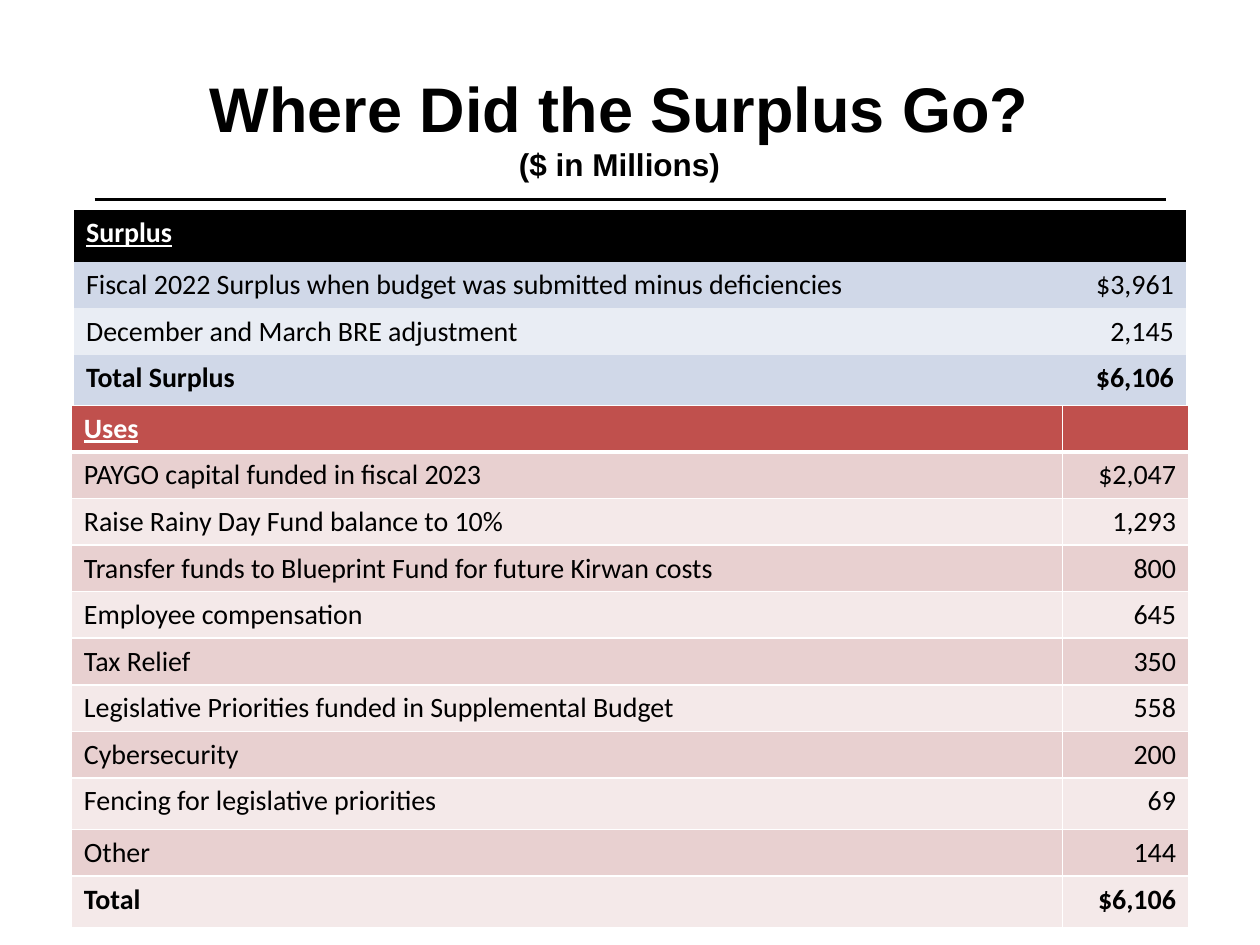
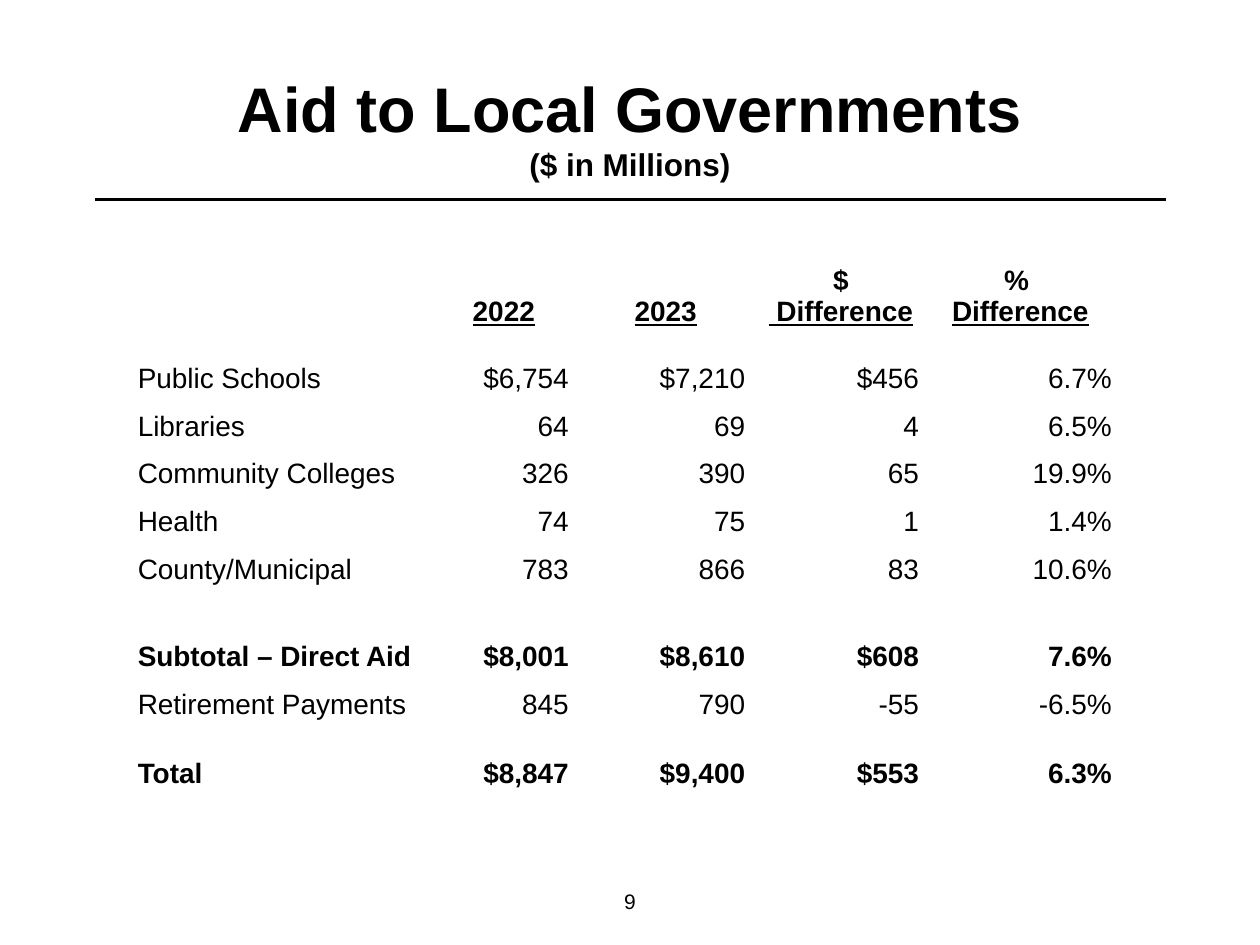
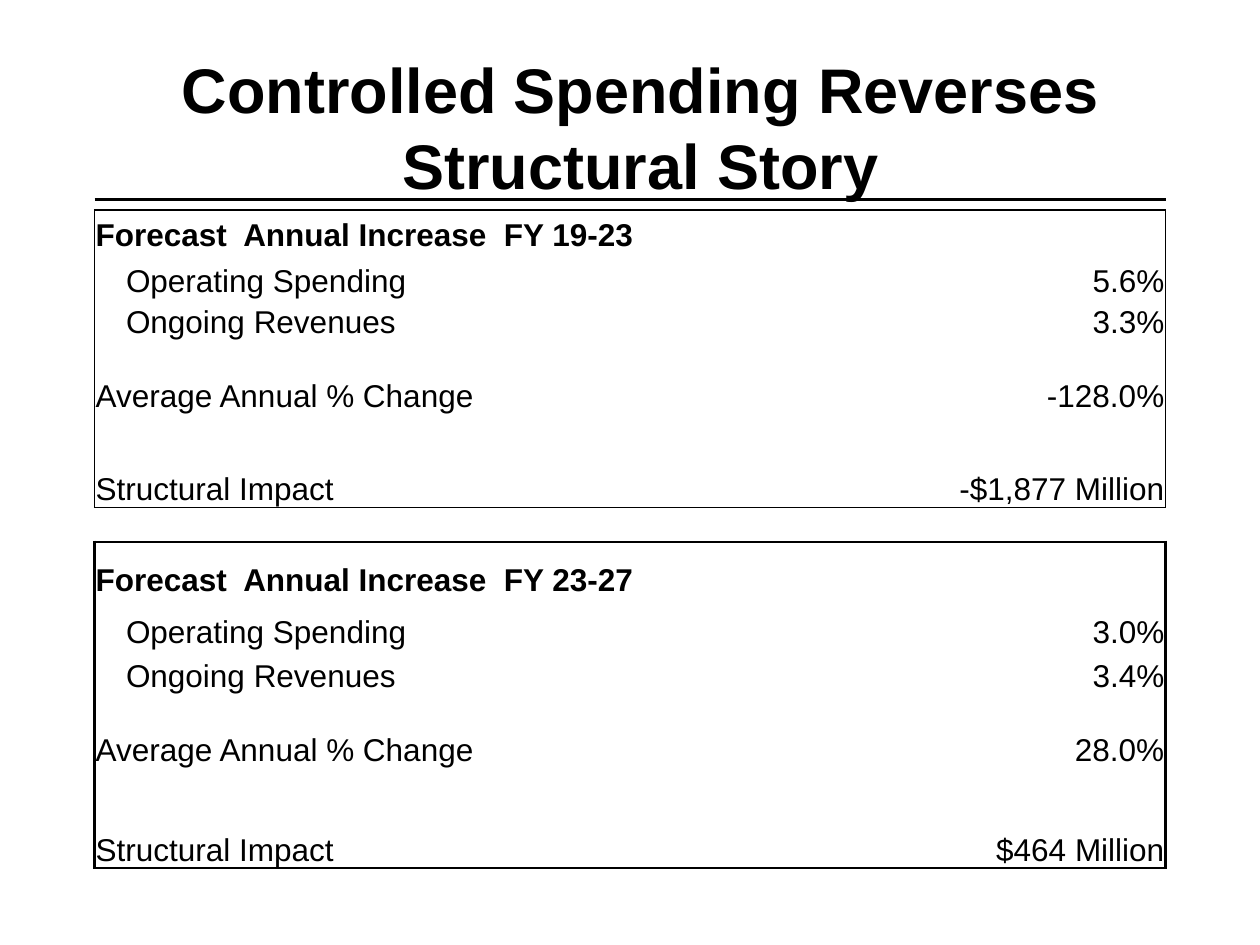
from dataclasses import dataclass, replace

from lxml import etree
from pptx import Presentation, util as u
from pptx.dml.color import RGBColor
from pptx.enum import shapes, text
from pptx.oxml import ns

LEFT, CENTER, RIGHT = text.PP_ALIGN.LEFT, text.PP_ALIGN.CENTER, text.PP_ALIGN.RIGHT
NO_TABLE_STYLE = "{2D5ABB26-0587-4C30-8999-92F81FD0307C}"
GRID_COLUMNS, GRID_ROWS = 120, 90
WIDTH, HEIGHT = u.Inches(10), u.Inches(7.5)


@dataclass(frozen=True)
class Theme:
    heading_font: str = "Arial"
    ledger_font: str = "Calibri"
    ink: str = "000000"
    paper: str = "FFFFFF"
    blue_bands: tuple = ("D0D8E8", "E9EDF4")
    uses_header: str = "C0504D"
    red_bands: tuple = ("E8D0D0", "F4E9E9")
    title: int = 36
    subtitle: int = 18
    body: int = 16
    forecast: int = 18
    page_number: int = 12
    rule: float = 1.75


THEME = Theme()


@dataclass(frozen=True)
class Box:
    """A region in grid columns and rows."""
    left: float
    top: float
    width: float
    height: float

    def lengths(self):
        column, row = WIDTH / GRID_COLUMNS, HEIGHT / GRID_ROWS
        return [int(length) for length in (self.left * column, self.top * row,
                                           self.width * column, self.height * row)]


@dataclass(frozen=True)
class Style:
    font: str = THEME.heading_font
    size: float = THEME.body
    color: str = THEME.ink
    bold: bool = False
    underline: bool = False


@dataclass(frozen=True)
class Cell:
    lines: tuple = ()          # one (wording, style) pair per paragraph
    align: object = LEFT
    anchor: object = text.MSO_ANCHOR.BOTTOM
    margins: tuple = (0.01, 0.01, 0.01, 0)  # left, top, right, bottom
    fill: str = None
    borders: tuple = ()        # (side, colour, points)


# Shared parts

def add_run(paragraph, wording, style):
    run = paragraph.add_run()
    run.text = wording
    run.font.name, run.font.size = style.font, u.Pt(style.size)
    run.font.bold, run.font.underline = style.bold, style.underline
    run.font.color.rgb = RGBColor.from_string(style.color)


def add_text_box(slide, box, runs):
    frame = slide.shapes.add_textbox(*box.lengths()).text_frame
    frame.word_wrap = True
    frame.vertical_anchor = text.MSO_ANCHOR.MIDDLE
    paragraph = frame.paragraphs[0]
    paragraph.alignment = CENTER
    for index, (wording, style) in enumerate(runs):
        if index:
            paragraph.add_line_break()
        add_run(paragraph, wording, style)


def add_heading(slide, box, title, subtitle=None):
    # Rule under the title
    left, top, width, _ = Box(9, 19, 102, 0).lengths()
    rule = slide.shapes.add_connector(shapes.MSO_CONNECTOR.STRAIGHT,
                                      left, top, left + width, top)
    rule.line.color.rgb = RGBColor.from_string(THEME.ink)
    rule.line.width = u.Pt(THEME.rule)
    etree.SubElement(rule.element.spPr, ns.qn("a:effectLst"))
    # Title and its unit line
    runs = [(title, Style(size=THEME.title, bold=True))]
    if subtitle:
        runs.append((subtitle, Style(size=THEME.subtitle, bold=True)))
    add_text_box(slide, box, runs)


def set_border(cell, side, color, points):
    properties = cell._tc.get_or_add_tcPr()
    line = etree.SubElement(properties, ns.qn(f"a:ln{side}"), w=str(u.Pt(points)))
    fill = etree.SubElement(line, ns.qn("a:solidFill"))
    etree.SubElement(fill, ns.qn("a:srgbClr"), val=color)


def fill_cell(cell, content):
    cell.vertical_anchor = content.anchor
    (cell.margin_left, cell.margin_top,
     cell.margin_right, cell.margin_bottom) = map(u.Inches, content.margins)
    for side, color, points in sorted(content.borders, key=lambda b: "LRTB".index(b[0])):
        set_border(cell, side, color, points)
    if content.fill:
        cell.fill.solid()
        cell.fill.fore_color.rgb = RGBColor.from_string(content.fill)
    else:
        cell.fill.background()
    frame = cell.text_frame
    for index, (wording, style) in enumerate(content.lines):
        paragraph = frame.add_paragraph() if index else frame.paragraphs[0]
        paragraph.alignment = content.align
        add_run(paragraph, wording, style)
    if not content.lines:  # keeps an empty row from growing
        etree.SubElement(frame.paragraphs[0]._p, ns.qn("a:endParaRPr"), sz="1200")


def share_out(total, weights):
    return [int(total * weight / sum(weights)) for weight in weights]


def add_table(slide, box, columns, rows, contents):
    frame = slide.shapes.add_table(len(rows), len(columns), *box.lengths())
    table = frame.table
    table.first_row = table.horz_banding = False
    for style_id in frame.element.iter(ns.qn("a:tableStyleId")):
        style_id.text = NO_TABLE_STYLE
    _, _, width, height = box.lengths()
    for column, length in zip(table.columns, share_out(width, columns)):
        column.width = length
    for row, length in zip(table.rows, share_out(height, rows)):
        row.height = length
    for row_index, row_contents in enumerate(contents):
        for column_index, content in enumerate(row_contents):
            fill_cell(table.cell(row_index, column_index), content)
    return table


# Surplus slide

def add_ledger(slide, box, columns, heights, header, header_fill, bands, entries, grid=()):
    """Header row, banded entries and a bold last row."""
    base = Cell(anchor=text.MSO_ANCHOR.TOP, margins=(0.1, 0.05, 0.1, 0.05), borders=grid)
    header_style = Style(THEME.ledger_font, color=THEME.paper, bold=True, underline=True)
    header_grid = tuple((side, color, 3 if side == "B" else points)
                        for side, color, points in grid)
    blank = replace(base, fill=header_fill, borders=header_grid)
    contents = [[replace(blank, lines=((header, header_style),)), blank]]
    for index, (label, amount) in enumerate(entries):
        style = Style(THEME.ledger_font, bold=index == len(entries) - 1)
        top_edge = header_grid[-1:] if index == 0 else grid[-1:]
        edges = grid[:2] + tuple(("T", color, points) for _, color, points in top_edge) + grid[-1:]
        cell = replace(base, fill=bands[index % 2], borders=edges)
        contents.append([replace(cell, lines=((label, style),)),
                         replace(cell, lines=((amount, style),), align=RIGHT)])
    add_table(slide, box, columns, heights, contents)


def build_surplus(slide):
    add_heading(slide, Box(6, 6.9, 106, 10.3), "Where Did the Surplus Go?", "($ in Millions)")
    add_ledger(slide, Box(7, 20, 106, 18.6), (7.58, 1.25), (41, 37, 37, 40),
               "Surplus", THEME.ink, THEME.blue_bands, [
        ("Fiscal 2022 Surplus when budget was submitted minus deficiencies", "$3,961"),
        ("December and March BRE adjustment", "2,145"),
        ("Total Surplus", "$6,106"),
    ])
    white_grid = tuple((side, THEME.paper, 1) for side in "LRTB")
    add_ledger(slide, Box(6.8, 38.6, 106.4, 49.8), (7.87, 1), [37] * 8 + [41, 37, 41],
               "Uses", THEME.uses_header, THEME.red_bands, [
        ("PAYGO capital funded in fiscal 2023", "$2,047"),
        ("Raise Rainy Day Fund balance to 10%", "1,293"),
        ("Transfer funds to Blueprint Fund for future Kirwan costs", "800"),
        ("Employee compensation", "645"),
        ("Tax Relief", "350"),
        ("Legislative Priorities funded in Supplemental Budget", "558"),
        ("Cybersecurity", "200"),
        ("Fencing for legislative priorities", "69"),
        ("Other", "144"),
        ("Total", "$6,106"),
    ], white_grid)


# Local aid slide

def add_aid_table(slide, box, headers, entries, heights):
    plain, bold = Style(), Style(bold=True)
    underlined = Style(bold=True, underline=True)
    contents = [[Cell()]]
    for *upper, last in headers:
        lines = tuple((line, bold) for line in upper) + ((last, underlined),)
        contents[0].append(Cell(lines, CENTER))
    for label, *amounts, percent in entries:
        style = bold if label.startswith(("Subtotal", "Total")) else plain
        contents.append(
            [Cell(((label, style),))]
            + [Cell(((amount, style),), RIGHT, margins=(0.01, 0.01, 0.07, 0))
               for amount in amounts]
            + [Cell(((percent, style),), RIGHT)])
    add_table(slide, box, (2.33, 1.17, 1.4, 1.38, 1.47), heights, contents)


def build_local_aid(slide):
    add_heading(slide, Box(9, 6.9, 102, 10.3), "Aid to Local Governments", "($ in Millions)")
    add_aid_table(slide, Box(13, 24, 93, 51.2),
                  [("2022",), ("2023",), ("$", " Difference"), ("% ", "Difference")], [
        ("Public Schools", "$6,754", "$7,210", "$456", "6.7%"),
        ("Libraries", "64", "69", "4", "6.5%"),
        ("Community Colleges", "326", "390", "65", "19.9%"),
        ("Health", "74", "75", "1", "1.4%"),
        ("County/Municipal", "783", "866", "83", "10.6%"),
        ("Subtotal – Direct Aid", "$8,001", "$8,610", "$608", "7.6%"),
        ("Retirement Payments", "845", "790", "-55", "-6.5%"),
        ("Total", "$8,847", "$9,400", "$553", "6.3%"),
    ], [60, 53] + [38] * 4 + [69, 38, 55])
    add_text_box(slide, Box(46, 83.4, 28, 4.8), [("9", Style(size=THEME.page_number))])


# Structural forecast slide

def add_forecast(slide, box, heights, years, amounts, outline):
    """Outlined panel: heading, two indented rates, change and impact."""
    style = Style(size=THEME.forecast)
    heading = replace(style, bold=True)
    spending, revenues, change, impact = amounts
    entries = [
        (f"Forecast  Annual Increase  FY {years}", None),
        ("Operating Spending", spending), ("Ongoing Revenues", revenues),
        (None, None), ("Average Annual % Change", change),
        (None, None), ("Structural Impact", impact), (None, None),
    ]
    last = len(entries) - 2  # the outline closes above the spacing row
    contents = []
    for index, (label, amount) in enumerate(entries):
        edges = {0: "T", last: "B", last + 1: "T"}.get(index, "")
        left, right = (edges + side if index <= last else edges for side in "LR")
        indent = 0.25 if index in (1, 2) else 0.01
        label_style = style if index else heading
        contents.append([
            Cell(((label, label_style),) if label else (), margins=(indent, 0.01, 0.01, 0),
                 borders=tuple((side, THEME.ink, outline)
                               for side in (left if index else "LTR"))),
            Cell(((amount, style),) if amount else (), RIGHT,
                 borders=tuple((side, THEME.ink, outline) for side in right)),
        ])
    table = add_table(slide, box, (6.05, 2.45), heights, contents)
    table.cell(0, 0).merge(table.cell(0, 1))


def build_forecast(slide):
    add_heading(slide, Box(9, 6.9, 104, 10.3), "Controlled Spending Reverses Structural Story")
    add_forecast(slide, Box(9, 51.6, 102, 36.8), (45, 41, 35, 28, 30, 30, 49, 49), "23-27",
                 ("3.0%", "3.4%", "28.0%", "$464 Million"), 1.5)
    add_forecast(slide, Box(9, 20, 102, 33.5), (34, 37, 32, 28, 30, 30, 44, 44), "19-23",
                 ("5.6%", "3.3%", "-128.0%", "-$1,877 Million"), 1)


def main():
    presentation = Presentation()
    presentation.slide_width, presentation.slide_height = WIDTH, HEIGHT
    blank_layout = presentation.slide_layouts[6]
    for build in (build_surplus, build_local_aid, build_forecast):
        build(presentation.slides.add_slide(blank_layout))
    presentation.save("out.pptx")


if __name__ == "__main__":
    main()
